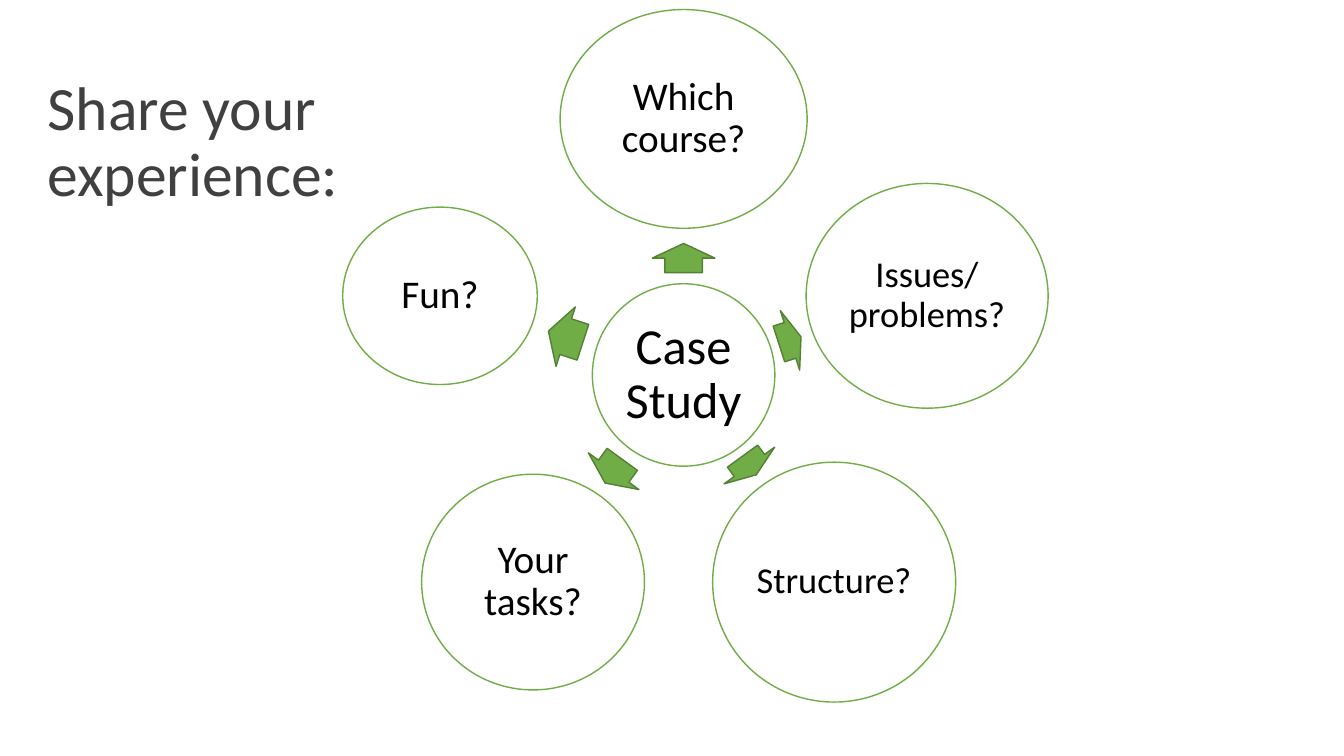
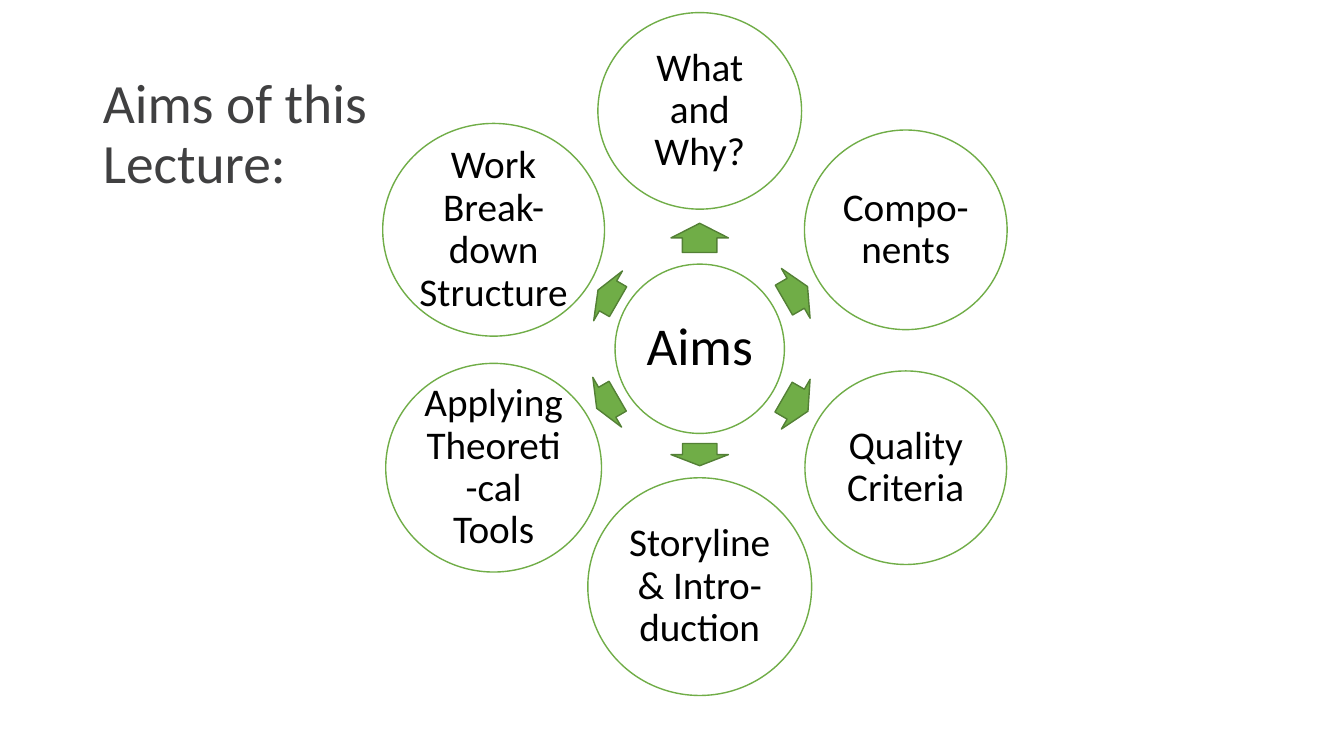
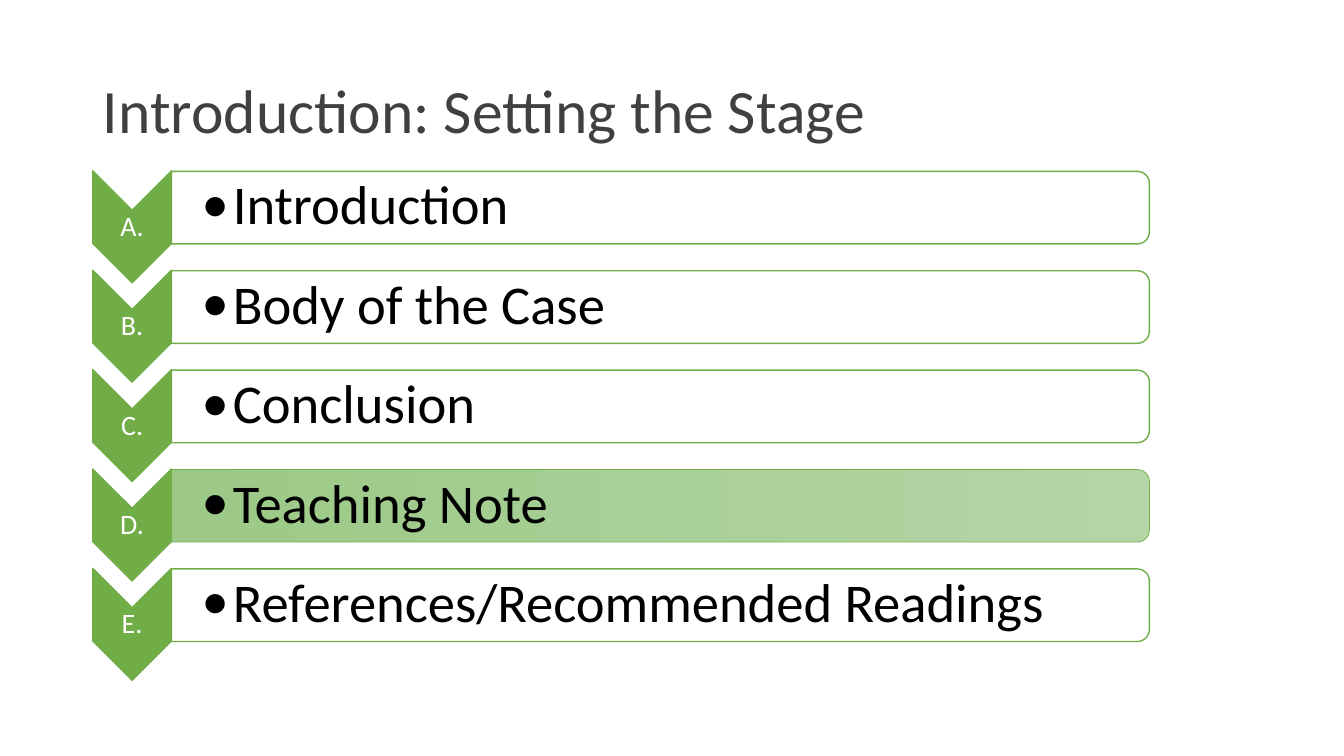
import math
from lxml import etree
from pptx import Presentation
from pptx.dml.color import RGBColor
from pptx.enum import shapes, text
from pptx.oxml import ns
from pptx.util import Inches, Pt

GREEN = RGBColor(0x70, 0xAD, 0x47)
DARK_GREEN = RGBColor(0x53, 0x80, 0x35)
LIGHT_GREEN = RGBColor(0xB5, 0xD5, 0xA7)
MID_GREEN = RGBColor(0x9C, 0xC9, 0x87)
GREY = RGBColor(0x40, 0x40, 0x41)
BLACK = RGBColor(0, 0, 0)
WHITE = RGBColor(0xFF, 0xFF, 0xFF)
FONT = "Calibri"
LEFT, CENTER = text.PP_ALIGN.LEFT, text.PP_ALIGN.CENTER
KIND = shapes.MSO_SHAPE

prs = Presentation()
prs.slide_width, prs.slide_height = Inches(13.33), Inches(7.5)


def add_shape(s, kind, cx, cy, w, h, fill, line, rot=0):
    """Add a preset shape by its centre."""
    sp = s.shapes.add_shape(kind, Inches(cx - w / 2), Inches(cy - h / 2),
                            Inches(w), Inches(h))
    sp.rotation = rot
    sp.shadow.inherit = False
    sp.fill.solid()
    sp.fill.fore_color.rgb = fill
    sp.line.color.rgb = line
    sp.line.width = Pt(1)
    return sp


def write(sp, words, size, color, align=CENTER, inset=0.04, left=None, bullet=False):
    """Put one formatted paragraph into a shape."""
    tf = sp.text_frame
    frame = {"word_wrap": True, "auto_size": text.MSO_AUTO_SIZE.NONE,
             "vertical_anchor": text.MSO_ANCHOR.MIDDLE,
             "margin_left": Inches(inset if left is None else left),
             "margin_right": Inches(inset),
             "margin_top": Inches(inset), "margin_bottom": Inches(inset)}
    for name, value in frame.items():
        setattr(tf, name, value)
    p = tf.paragraphs[0]
    p.alignment, p.line_spacing = align, 0.9
    if bullet:
        pPr = p._p.get_or_add_pPr()
        pPr.set("marL", str(Inches(0.31)))
        pPr.set("indent", str(Inches(-0.31)))
        etree.SubElement(pPr, ns.qn("a:buFont")).set("typeface", FONT)
        etree.SubElement(pPr, ns.qn("a:buChar")).set("char", "•")
    r = p.add_run()
    r.text = words
    for name, value in {"name": FONT, "size": Pt(size)}.items():
        setattr(r.font, name, value)
    r.font.color.rgb = color


# Slides and titles: words, size, left, top, width
titles = [
    ("Share your experience:", 44, 0.37, 0.7, 4.14),
    ("Aims of this Lecture:", 39.6, 0.92, 0.62, 3.02),
    ("Introduction: Setting the Stage", 44, 0.92, 0.4, 11.5),
]
slides = []
for words, size, left, top, width in titles:
    s = prs.slides.add_slide(prs.slide_layouts[5])
    title = s.shapes.title
    title.left, title.top = Inches(left), Inches(top)
    title.width, title.height = Inches(width), Inches(1.45)
    write(title, words, size, GREY, LEFT, inset=0.05, left=0.1)
    slides.append(s)

# Wheels: hub words, size, centre, diameter, radius to the nodes, arrow breadth
# Nodes clockwise from the top: words, size, width, height, arrow radius, arrow length
wheels = [
    ("Case Study", 36, 6.78, 3.72, 1.81, 2.54, 0.62, [
        ("Which course?", 28, 2.45, 2.17, 1.16, 0.29),
        ("Issues/ problems?", 26, 2.4, 2.23, 1.11, 0.23),
        ("Structure?", 26, 2.41, 2.38, 1.11, 0.23),
        ("Your tasks?", 28, 2.21, 2.14, 1.18, 0.29),
        ("Fun?", 28, 1.93, 1.76, 1.23, 0.36),
    ]),
    ("Aims", 38, 6.94, 3.46, 1.68, 2.36, 0.57, [
        ("What and Why?", 28, 2.02, 1.95, 1.1, 0.29),
        ("Compo-nents", 28, 2.01, 1.98, 1.1, 0.27),
        ("Quality Criteria", 28, 2, 1.92, 1.1, 0.28),
        ("Storyline & Intro-duction", 28, 2.22, 2.16, 1.05, 0.22),
        ("Applying Theoreti-cal Tools", 28, 2.14, 2.07, 1.06, 0.24),
        ("Work Break-down Structure", 28, 2.2, 2.11, 1.05, 0.23),
    ]),
]
for s, (hub, hub_size, cx, cy, dia, radius, breadth, nodes) in zip(slides, wheels):
    sp = add_shape(s, KIND.OVAL, cx, cy, dia, dia, WHITE, GREEN)
    write(sp, hub, hub_size, BLACK, inset=0.05)
    for i, (words, size, w, h, arrow_radius, length) in enumerate(nodes):
        angle = 360 * i / len(nodes) - 90
        dx, dy = math.cos(math.radians(angle)), math.sin(math.radians(angle))
        arrow = add_shape(s, KIND.RIGHT_ARROW, cx + arrow_radius * dx,
                          cy + arrow_radius * dy, length, breadth,
                          GREEN, DARK_GREEN, angle % 360)
        arrow.adjustments[0], arrow.adjustments[1] = 0.6, 0.5
        node = add_shape(s, KIND.OVAL, cx + radius * dx, cy + radius * dy,
                         w, h, WHITE, GREEN)
        write(node, words, size, BLACK)

# Agenda: lettered chevrons beside bars
s = slides[2]
agenda = ["Introduction", "Body of the Case", "Conclusion", "Teaching Note",
          "References/Recommended Readings"]
current = "Teaching Note"
for i, words in enumerate(agenda):
    y = 2.06 + 0.986 * i
    add_shape(s, KIND.CHEVRON, 1.31, y + 0.19, 1.11, 0.78, GREEN, GREEN, 90)
    label = s.shapes.add_textbox(Inches(0.92), Inches(y + 0.03), Inches(0.78), Inches(0.33))
    write(label, "ABCDE"[i] + ".", 20, WHITE, inset=0.01)

    bar = add_shape(s, KIND.ROUND_2_SAME_RECTANGLE, 6.55, y, 0.72, 9.7, WHITE, GREEN, 90)
    if words == current:
        bar.fill.gradient()
        bar.fill.gradient_angle = 270
        for stop, color in zip(bar.fill.gradient_stops, (LIGHT_GREEN, MID_GREEN)):
            stop.color.rgb = color
        bar.line.width = Pt(0.5)
    item = s.shapes.add_textbox(Inches(1.7), Inches(y - 0.33), Inches(9.67), Inches(0.65))
    write(item, words, 39, BLACK, LEFT, inset=0.03, left=0.3, bullet=True)

prs.save("out.pptx")
